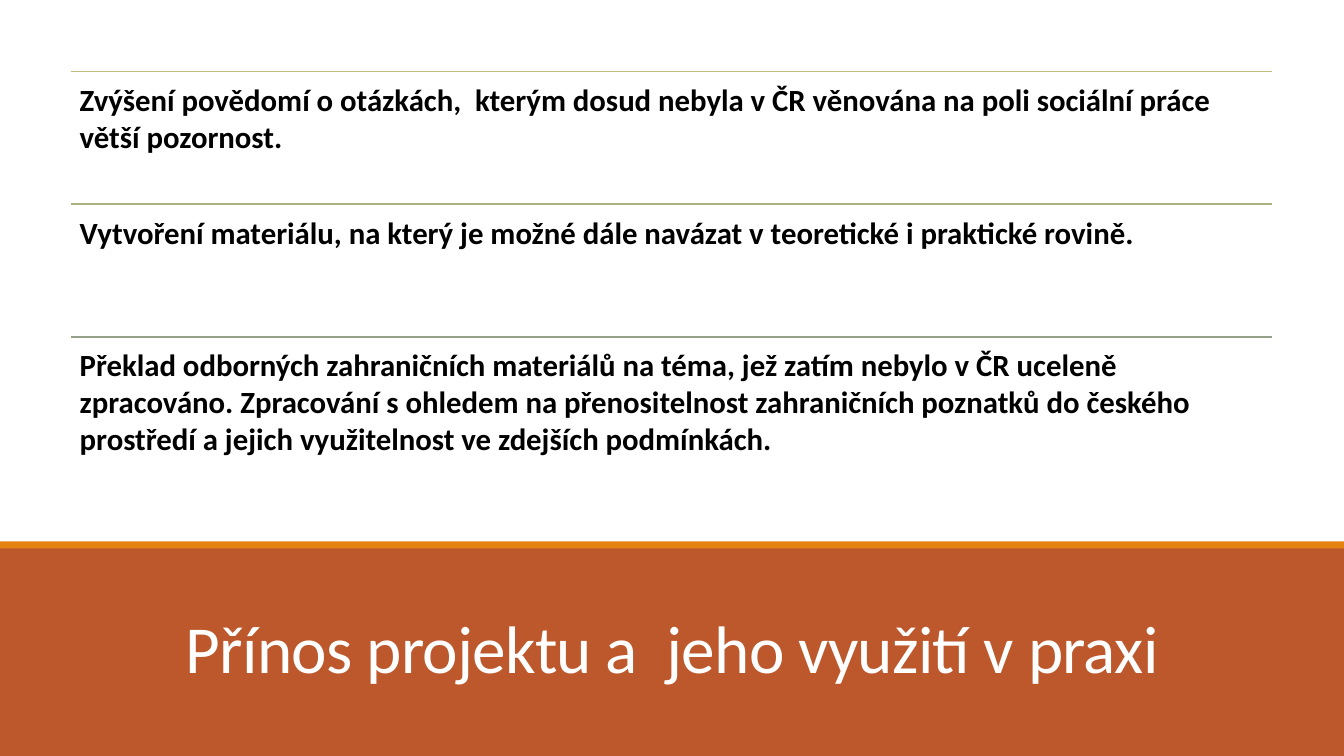
from pptx import Presentation
from pptx.dml.color import RGBColor
from pptx.enum.shapes import MSO_CONNECTOR as Link, MSO_SHAPE as Shape
from pptx.enum.text import MSO_ANCHOR as Anchor, PP_ALIGN as Align
from pptx.oxml.ns import qn
from pptx.util import Cm, Pt
from lxml.etree import SubElement

WIDE, HIGH = 33.87, 19.05
GAINS = [
    ("C2BC80", "Zvýšení povědomí o otázkách,  kterým dosud nebyla v ČR věnována "
               "na poli sociální práce větší pozornost."),
    ("A8B283", "Vytvoření materiálu, na který je možné dále navázat "
               "v teoretické i praktické rovině."),
    ("94A088", "Překlad odborných zahraničních materiálů na téma, jež zatím nebylo "
               "v ČR uceleně zpracováno. Zpracování s ohledem na přenositelnost "
               "zahraničních poznatků do českého prostředí a jejich využitelnost "
               "ve zdejších podmínkách."),
]


def paint(hue):
    return RGBColor.from_string(hue)


def add_text(slide, box, text, size, hue, bold=False, align=Align.LEFT,
             anchor=Anchor.TOP, inset=(0.25, 0.13), lead=1.0, track=0):
    frame = slide.shapes.add_textbox(*map(Cm, box)).text_frame
    frame.word_wrap = True
    frame.vertical_anchor = anchor
    frame.margin_left = frame.margin_right = Cm(inset[0])
    frame.margin_top = frame.margin_bottom = Cm(inset[1])
    para = frame.paragraphs[0]
    para.alignment = align
    para.line_spacing = lead
    run = para.add_run()
    run.text = text
    font = run.font
    font.name, font.size, font.bold = "Calibri", Pt(size), bold
    font.color.rgb = paint(hue)
    if track:
        run._r.get_or_add_rPr().set("spc", str(track))


def add_bar(slide, box, hue):
    bar = slide.shapes.add_shape(Shape.RECTANGLE, *map(Cm, box))
    bar.shadow.inherit = False
    bar.fill.solid()
    bar.fill.fore_color.rgb = paint(hue)
    bar.line.fill.background()


def add_rule(slide, left, top, width, hue):
    ends = map(Cm, (left, top, left + width, top))
    rule = slide.shapes.add_connector(Link.STRAIGHT, *ends)
    rule.line.color.rgb = paint(hue)
    rule.line.width = Pt(1.25)
    SubElement(rule._element.spPr, qn("a:effectLst"))


def add_list(slide, box, items):
    left, top, width, height = box
    step = height / len(items)
    for row, (hue, text) in enumerate(items):
        y = top + row * step
        add_rule(slide, left, y, width, hue)
        add_text(slide, (left, y, width, step), text, 22, "000000",
                 bold=True, inset=(0.23, 0.23))


def add_band(slide, box, title):
    left, top, width, height = box
    add_bar(slide, box, "BD582C")
    add_bar(slide, (left, top - 0.13, width, 0.18), "E48312")
    add_text(slide, (left + 2.97, top + 0.81, width - 5.93, 2.87), title, 48,
             "FFFFFF", align=Align.CENTER, anchor=Anchor.BOTTOM,
             lead=0.85, track=-50)


def main():
    deck = Presentation()
    deck.slide_width, deck.slide_height = Cm(WIDE), Cm(HIGH)
    slide = deck.slides.add_slide(deck.slide_layouts[6])
    add_band(slide, (0, 13.77, WIDE, HIGH - 13.77),
             "Přínos projektu a  jeho využití v praxi")
    add_list(slide, (1.78, 1.8, 30.28, 10.03), GAINS)
    deck.save("out.pptx")


if __name__ == "__main__":
    main()
